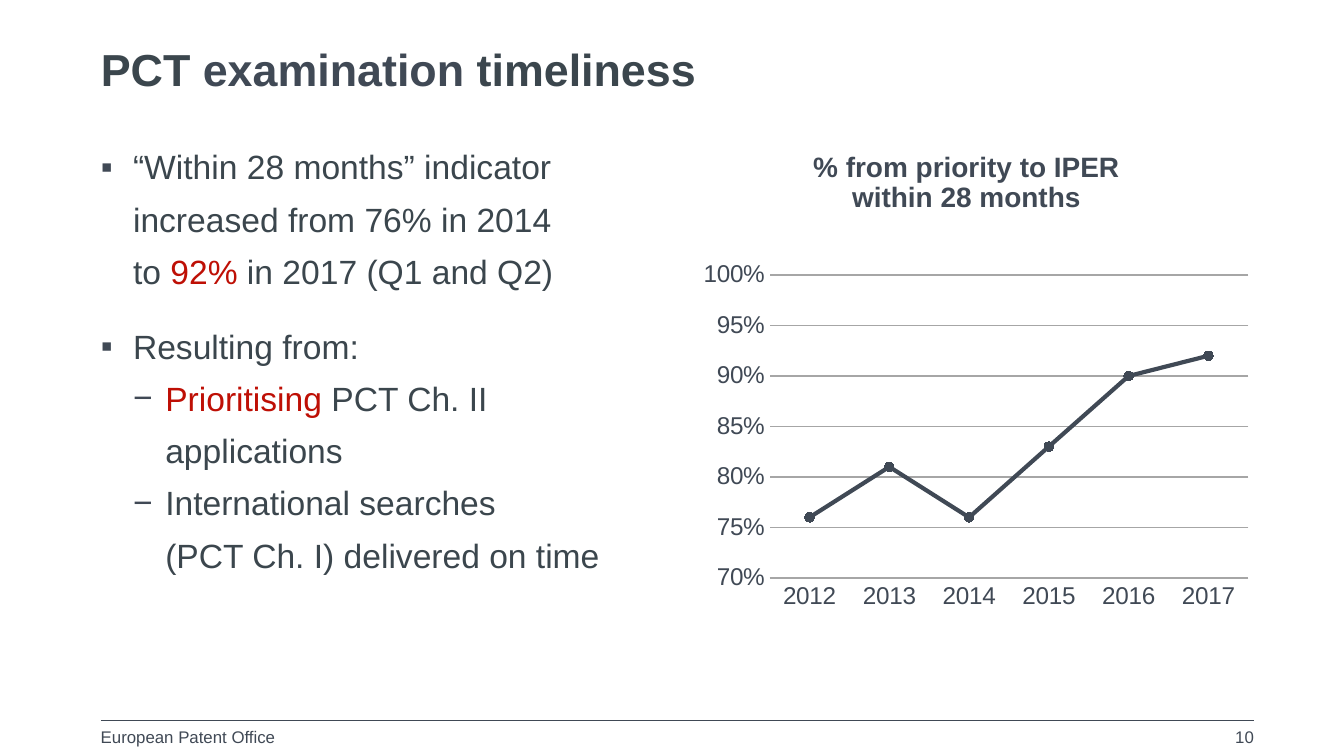
from lxml import etree
from pptx import Presentation
from pptx.chart.data import CategoryChartData
from pptx.dml.color import RGBColor
from pptx.enum.chart import XL_CHART_TYPE as Kind, XL_MARKER_STYLE as Mark, XL_TICK_MARK as Tick
from pptx.enum.shapes import MSO_CONNECTOR as Conn
from pptx.enum.text import MSO_ANCHOR as Anchor, PP_ALIGN as Align
from pptx.oxml.ns import qn
from pptx.util import Inches, Pt

FONT = "Arial"
COLORS = {"slate": "404955", "text": "3B464D", "red": "BE0F05", "grid": "A6A6A6"}
LEFT, WIDTH = 0.75, 8.58
RIGHT = LEFT + WIDTH
COL = 4.19
HANG = 0.24

# A paragraph is a list of (text, colour) runs.
TITLE = [("PCT ", "text"), ("examination", "slate"), (" timeliness", "text")]
# level, space before, runs
POINTS = [
    (0, 0, [("“Within 28 months” indicator increased from 76% in 2014\nto ", "text"),
            ("92%", "red"), (" in 2017 (Q1 and Q2)", "text")]),
    (0, 12, [("Resulting from:", "text")]),
    (1, 0, [("Prioritising", "red"), (" PCT Ch. II applications", "text")]),
    (1, 0, [("International searches\n(PCT Ch. I) delivered on time", "text")]),
]
BULLETS = "▪−"
HEADING = ["% from priority to IPER", "within 28 months"]
RATES = {"2012": 0.76, "2013": 0.81, "2014": 0.76, "2015": 0.83, "2016": 0.9, "2017": 0.92}
HEAD_AT = {"x": 0.21, "y": 0}
PLOT_AT = {"x": 0.14, "y": 0.27, "w": 0.85, "h": 0.63}


def rgb(name):
    return RGBColor.from_string(COLORS[name])


def style(font, size, color="slate", bold=False):
    font.name, font.size, font.bold = FONT, Pt(size), bold
    font.color.rgb = rgb(color)


def stroke(line, color, width):
    line.color.rgb = rgb(color)
    line.width = Pt(width)


def bullet(para, level):
    para.level = level
    props = para._p.get_or_add_pPr()
    props.set("marL", str(Inches(HANG * (level + 1))))
    props.set("indent", str(-Inches(HANG)))
    tint = etree.SubElement(props, qn("a:buClr"))
    etree.SubElement(tint, qn("a:srgbClr"), val=COLORS["slate"])
    etree.SubElement(props, qn("a:buFont"), typeface=FONT)
    etree.SubElement(props, qn("a:buChar"), char=BULLETS[level])


def add_text(slide, box, items, size, bold=False, align=Align.LEFT,
             anchor=Anchor.TOP, wrap=True, bullets=False, spacing=None):
    """Items are (level, space before, runs), one for each paragraph."""
    frame = slide.shapes.add_textbox(*map(Inches, box)).text_frame
    frame.margin_left = frame.margin_right = frame.margin_top = frame.margin_bottom = 0
    frame.word_wrap, frame.vertical_anchor = wrap, anchor
    for i, (level, before, runs) in enumerate(items):
        para = frame.add_paragraph() if i else frame.paragraphs[0]
        if bullets:
            bullet(para, level)
        para.alignment, para.space_before = align, Pt(before)
        if spacing:
            para.line_spacing = Pt(spacing)
        for text, color in runs:
            for j, part in enumerate(text.split("\n")):
                if j:
                    para.add_line_break()
                run = para.add_run()
                run.text = part
                style(run.font, size, color, bold)


def add_rule(slide, y):
    rule = slide.shapes.add_connector(Conn.STRAIGHT, *map(Inches, (LEFT, y, RIGHT, y)))
    stroke(rule.line, "slate", 0.75)
    etree.SubElement(rule._element.spPr, qn("a:effectLst"))


def place(part, index, parts):
    """Give a chart part a fixed layout, as its child number index."""
    for old in part.findall(qn("c:layout")):
        part.remove(old)
    layout = etree.Element(qn("c:layout"))
    part.insert(index, layout)
    manual = etree.SubElement(layout, qn("c:manualLayout"))
    for tag, val in parts.items():
        etree.SubElement(manual, qn("c:" + tag), val=str(val))


def add_rates(slide, box):
    data = CategoryChartData(number_format="0%")
    data.categories = list(RATES)
    data.add_series("Series 1", list(RATES.values()))
    chart = slide.shapes.add_chart(Kind.LINE_MARKERS, *map(Inches, box), data).chart
    style(chart.font, 10)
    chart.has_legend = False
    chart.has_title = True
    chart.chart_title.include_in_layout = False
    frame = chart.chart_title.text_frame
    for i, text in enumerate(HEADING):
        para = frame.add_paragraph() if i else frame.paragraphs[0]
        run = para.add_run()
        run.text = text
        style(run.font, 15, bold=True)

    cats, vals = chart.category_axis, chart.value_axis
    for axis in (cats, vals):
        axis.major_tick_mark = axis.minor_tick_mark = Tick.NONE
        style(axis.tick_labels.font, 13)
    stroke(cats.format.line, "grid", 1)
    vals.format.line.fill.background()
    vals.minimum_scale, vals.maximum_scale, vals.major_unit = 0.7, 1, 0.05
    vals.tick_labels.number_format = "0%"
    vals.tick_labels.number_format_is_linked = False
    stroke(vals.major_gridlines.format.line, "grid", 0.75)

    plot = chart.plots[0]
    plot.vary_by_categories = False
    line = plot.series[0]
    line.smooth = False
    stroke(line.format.line, "slate", 2.25)
    line.marker.style, line.marker.size = Mark.CIRCLE, 5
    line.marker.format.fill.solid()
    line.marker.format.fill.fore_color.rgb = rgb("slate")
    stroke(line.marker.format.line, "slate", 0.75)

    edges = {"xMode": "edge", "yMode": "edge"}
    place(chart.chart_title._element, 1, {**edges, **HEAD_AT})
    place(chart._chartSpace.chart.plotArea, 0, {"layoutTarget": "inner", **edges, **PLOT_AT})


def main():
    deck = Presentation()
    deck.slide_width = Inches(10)
    deck.slide_height = deck.slide_width * 9 // 16
    slide = deck.slides.add_slide(deck.slide_layouts[6])
    add_rule(slide, 5.36)
    add_text(slide, (LEFT, 5.41, 1.7, 0.19), [(0, 0, [("European Patent Office", "slate")])], 9)
    add_text(slide, (LEFT, 0.29, WIDTH, 0.44), [(0, 0, TITLE)], 24, bold=True,
             anchor=Anchor.MIDDLE)
    add_text(slide, (LEFT, 1, COL, 4.17), POINTS, 18, bullets=True, spacing=28)
    add_text(slide, (RIGHT - 0.63, 5.41, 0.63, 0.19), [(0, 0, [("10", "slate")])], 9,
             align=Align.RIGHT, wrap=False)
    add_rates(slide, (RIGHT - COL, 1.08, COL, 3.58))
    deck.save("out.pptx")


if __name__ == "__main__":
    main()
